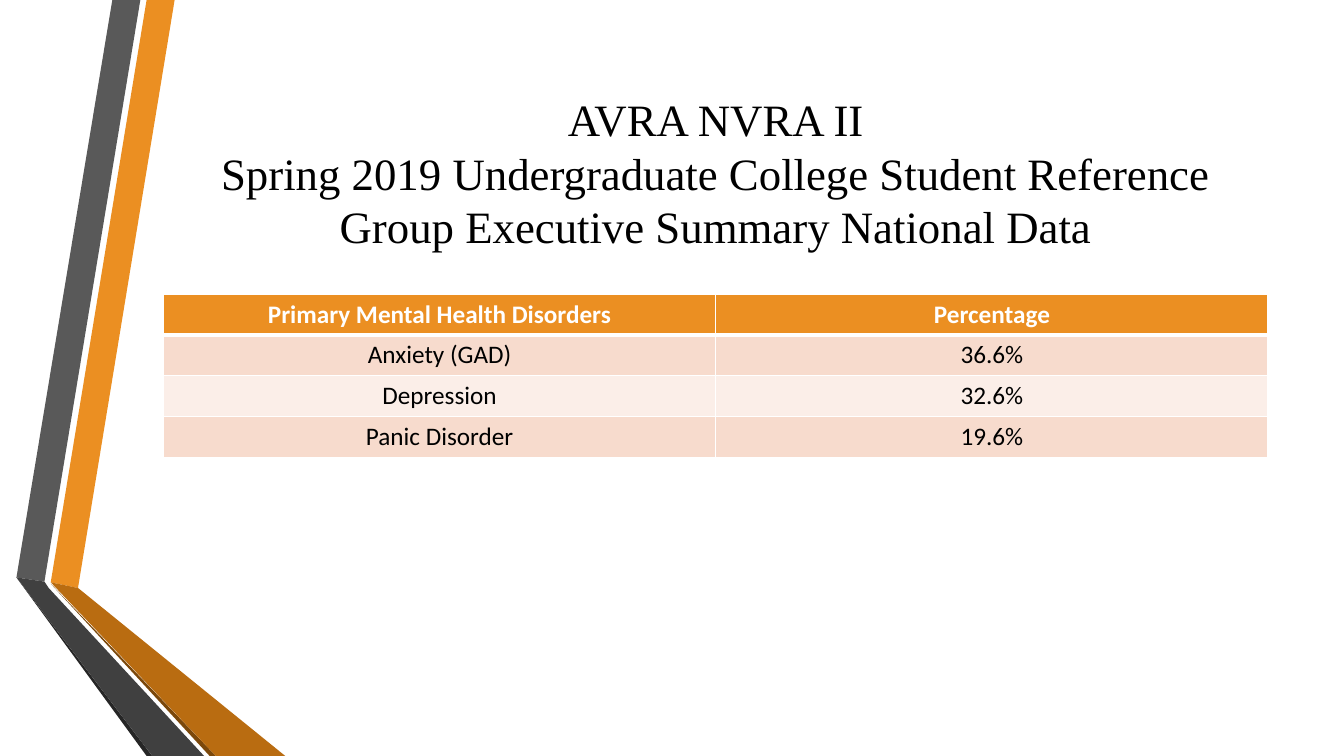
from lxml import etree
from pptx import Presentation
from pptx.dml.color import RGBColor
from pptx.enum.text import MSO_ANCHOR, MSO_AUTO_SIZE, PP_ALIGN
from pptx.oxml.ns import qn
from pptx.util import Pt

CENTER = PP_ALIGN.CENTER
MIDDLE = MSO_ANCHOR.MIDDLE
NO_AUTOFIT = MSO_AUTO_SIZE.NONE

WHITE = RGBColor(0xFF, 0xFF, 0xFF)
BLACK = RGBColor(0, 0, 0)
ORANGE = RGBColor(0xEB, 0x8F, 0x22)
ORANGE_DARK = RGBColor(0xB9, 0x6C, 0x11)
BROWN = RGBColor(0x7B, 0x48, 0x0B)
GRAY = RGBColor(0x59, 0x59, 0x59)
GRAY_DARK = RGBColor(0x40, 0x40, 0x40)
CHARCOAL = RGBColor(0x26, 0x26, 0x26)
BAND_DARK = RGBColor(0xF7, 0xDB, 0xCD)
BAND_LIGHT = RGBColor(0xFB, 0xEE, 0xE8)

TITLE_LINES = [
    "AVRA NVRA II",
    "Spring 2019 Undergraduate College Student Reference Group "
    "Executive Summary National Data",
]
DISORDERS = [
    ("Primary Mental Health Disorders", "Percentage"),
    ("Anxiety (GAD)", "36.6%"),
    ("Depression", "32.6%"),
    ("Panic Disorder", "19.6%"),
]
RIBBONS = [
    (ORANGE, [(24.5, 416), (44, 420), (113, 0), (93, 0)]),
    (GRAY, [(88.5, 0), (68.5, 0), (0, 412.5), (20, 415.5)]),
    (CHARCOAL, [(0, 412.5), (93, 540), (97, 540)]),
    (BROWN, [(24.5, 417), (138, 540), (142.5, 540)]),
    (ORANGE_DARK, [(24.5, 416), (142.5, 540), (192, 540), (44, 420)]),
    (GRAY_DARK, [(0, 412.5), (97, 540), (134, 540), (23, 420), (20, 415.5)]),
]


def add_run(p, text, font, size, color, bold=False):
    """Append one formatted run to a paragraph."""
    r = p.add_run()
    r.text = text
    r.font.name = font
    r.font.size = Pt(size)
    r.font.bold = bold
    r.font.color.rgb = color


def add_ribbons(s, x, y):
    """Draw the folded ribbons from the given top left corner."""
    for color, points in RIBBONS:
        corners = [(Pt(x + dx), Pt(y + dy)) for dx, dy in points]
        builder = s.shapes.build_freeform(*corners[0], scale=1.0)
        builder.add_line_segments(corners[1:], close=True)
        sp = builder.convert_to_shape()
        sp.shadow.inherit = False
        sp.fill.solid()
        sp.fill.fore_color.rgb = color
        sp.line.fill.background()


def add_title(s, x, y, w, h):
    """Place the centred title in the given box."""
    sp = s.shapes.title
    sp.left, sp.top, sp.width, sp.height = Pt(x), Pt(y), Pt(w), Pt(h)
    tf = sp.text_frame
    tf.word_wrap = True
    tf.auto_size = NO_AUTOFIT
    tf.vertical_anchor = MIDDLE
    p = tf.paragraphs[0]
    p.alignment = CENTER
    p.line_spacing = 1.0
    for i, line in enumerate(TITLE_LINES):
        if i:
            p.add_line_break()
        add_run(p, line, "Times New Roman", 32, BLACK)


def set_borders(cell, bottom, top):
    """Give a cell white borders of the given widths."""
    tc_pr = cell._tc.get_or_add_tcPr()
    widths = {"a:lnL": 1, "a:lnR": 1, "a:lnT": top, "a:lnB": bottom}
    for i, (tag, width) in enumerate(widths.items()):
        ln = etree.Element(qn(tag), w=str(Pt(width)))
        fill = etree.SubElement(ln, qn("a:solidFill"))
        etree.SubElement(fill, qn("a:srgbClr"), val=str(WHITE))
        tc_pr.insert(i, ln)


def add_disorder_table(s, x, y, w, h):
    """Fill the given box with the table of disorders."""
    rows, cols = len(DISORDERS), len(DISORDERS[0])
    table = s.shapes.add_table(rows, cols, Pt(x), Pt(y), Pt(w), Pt(h)).table
    for i, values in enumerate(DISORDERS):
        header = i == 0
        band = BAND_DARK if i % 2 else BAND_LIGHT
        for j, value in enumerate(values):
            cell = table.cell(i, j)
            cell.fill.solid()
            cell.fill.fore_color.rgb = ORANGE if header else band
            set_borders(cell, 3 if header else 1, 3 if i == 1 else 1)
            p = cell.text_frame.paragraphs[0]
            p.alignment = CENTER
            add_run(p, value, "Calibri", 18, WHITE if header else BLACK, header)


def main():
    """Build and save the slide."""
    prs = Presentation()
    prs.slide_width, prs.slide_height = Pt(960), Pt(540)
    s = prs.slides.add_slide(prs.slide_layouts[5])
    add_ribbons(s, 11.75, 0)
    add_title(s, 116.75, 54, 789, 138)
    add_disorder_table(s, 116.75, 210, 789, 117)
    prs.save("out.pptx")


if __name__ == "__main__":
    main()
